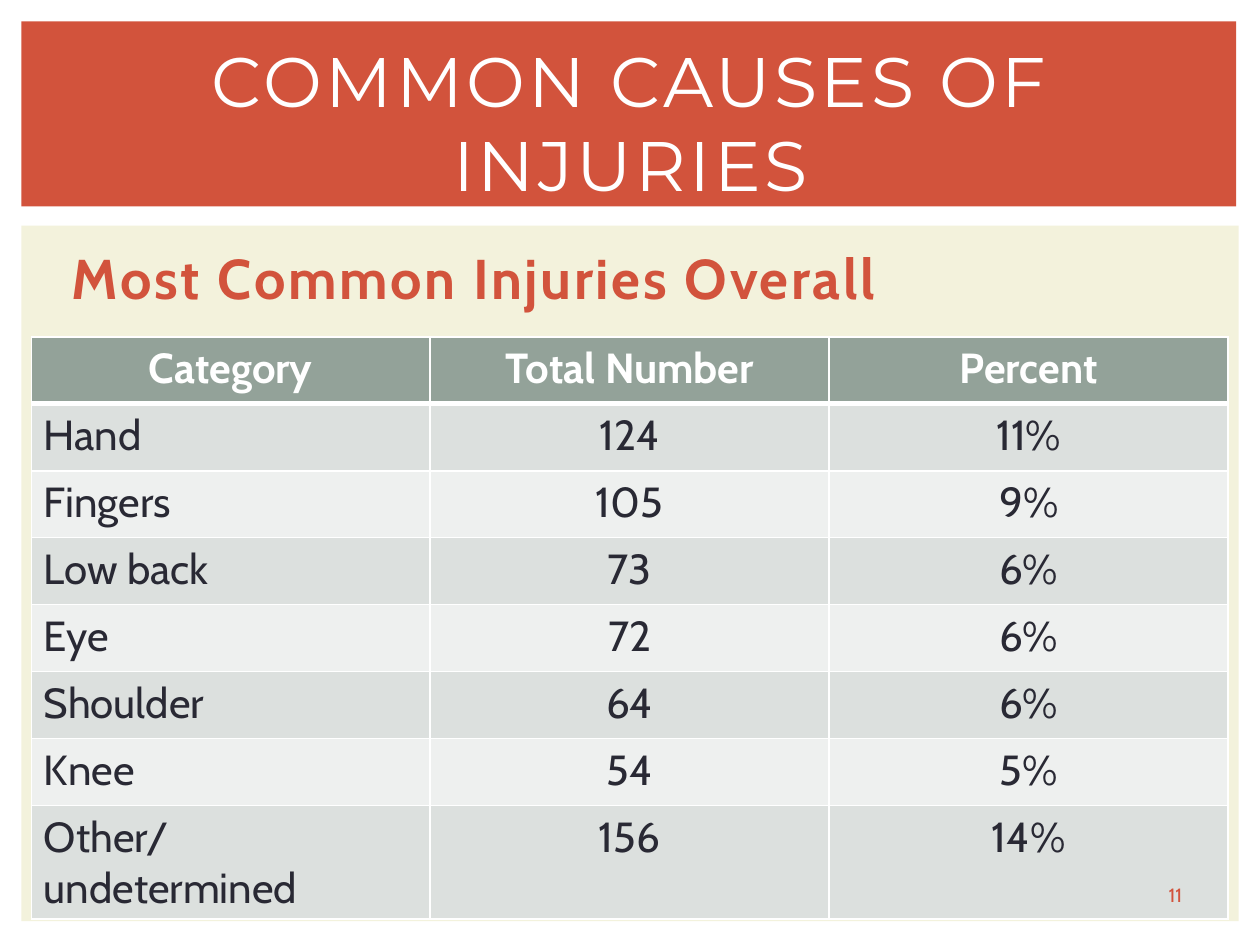
from lxml.etree import SubElement
from pptx import Presentation
from pptx.dml.color import RGBColor
from pptx.enum.shapes import MSO_SHAPE
from pptx.enum.text import MSO_ANCHOR, PP_ALIGN
from pptx.oxml.ns import qn
from pptx.util import Cm, Pt

RED, CREAM, WHITE, INK = "D2533C", "F3F2DC", "FFFFFF", "292934"
HEAD, BANDS = "93A299", ("DCE0DE", "EEF0EF")
ROWS = [
    ("Category", "Total Number", "Percent"),
    ("Hand", "124", "11%"),
    ("Fingers", "105", "9%"),
    ("Low back", "73", "6%"),
    ("Eye", "72", "6%"),
    ("Shoulder", "64", "6%"),
    ("Knee", "54", "5%"),
    ("Other/undetermined", "156", "14%"),
]


def rgb(color):
    return RGBColor.from_string(color)


def add_panel(s, x, y, w, h, color):
    sp = s.shapes.add_shape(MSO_SHAPE.RECTANGLE, Cm(x), Cm(y), Cm(w), Cm(h))
    sp.shadow.inherit = False
    sp.fill.solid()
    sp.fill.fore_color.rgb = rgb(color)
    sp.line.fill.background()


def write(tf, text, size, color, font="Cabin", bold=False, align=PP_ALIGN.CENTER, spacing=0):
    p = tf.paragraphs[0]
    p.alignment = align
    r = p.add_run()
    r.text = text
    r.font.name = font
    r.font.size = Pt(size)
    r.font.bold = bold
    r.font.color.rgb = rgb(color)
    if spacing:
        r._r.get_or_add_rPr().set("spc", str(int(spacing * 100)))


def add_text(s, x, y, w, h, text, size, color, anchor=MSO_ANCHOR.MIDDLE, **style):
    tf = s.shapes.add_textbox(Cm(x), Cm(y), Cm(w), Cm(h)).text_frame
    tf.word_wrap = True
    tf.vertical_anchor = anchor
    write(tf, text, size, color, **style)
    return tf


def add_banner(s, x, y, w, h):
    add_panel(s, x, y, w, h, RED)
    add_text(s, x + 0.64, y + 0.56, w - 1.2, h - 0.81, "COMMON CAUSES OF INJURIES",
             40, WHITE, font="Montserrat", spacing=2)


def set_borders(cell, bottom):
    tcPr = cell._tc.get_or_add_tcPr()
    for i, (side, width) in enumerate((("L", 1), ("R", 1), ("T", 1), ("B", bottom))):
        ln = SubElement(tcPr, qn(f"a:ln{side}"), w=str(Pt(width)))
        fill = SubElement(ln, qn("a:solidFill"))
        SubElement(fill, qn("a:srgbClr"), val=WHITE)
        tcPr.insert(i, ln)


def add_injury_table(s, x, y, w, h):
    table = s.shapes.add_table(len(ROWS), len(ROWS[0]), Cm(x), Cm(y), Cm(w), Cm(h)).table
    for i, row in enumerate(ROWS):
        header = i == 0
        for j, text in enumerate(row):
            cell = table.cell(i, j)
            cell.fill.solid()
            cell.fill.fore_color.rgb = rgb(HEAD if header else BANDS[(i - 1) % 2])
            set_borders(cell, 3 if header else 1)
            align = PP_ALIGN.CENTER if header or j else PP_ALIGN.LEFT
            write(cell.text_frame, text, 24, WHITE if header else INK, bold=header, align=align)


def add_content(s, x, y, w, h):
    add_panel(s, x, y, w, h, CREAM)
    tf = add_text(s, x + 0.64, y + 0.23, w - 1.2, 2, "Most Common Injuries Overall", 32, RED,
                  anchor=MSO_ANCHOR.TOP, bold=True, align=PP_ALIGN.LEFT, spacing=1.5)
    tf.margin_left = Cm(0.38)
    add_injury_table(s, x + 0.2, y + 2.24, 24.13, 10.8)
    add_text(s, x + 22.45, y + 13.1, 1.63, 0.76, "11", 11, RED)


def main():
    prs = Presentation()
    prs.slide_width, prs.slide_height = Cm(25.4), Cm(19.05)
    s = prs.slides.add_slide(prs.slide_layouts[6])
    add_banner(s, 0.43, 0.43, 24.49, 3.73)
    add_content(s, 0.43, 4.55, 24.54, 14.02)
    prs.save("out.pptx")


if __name__ == "__main__":
    main()
